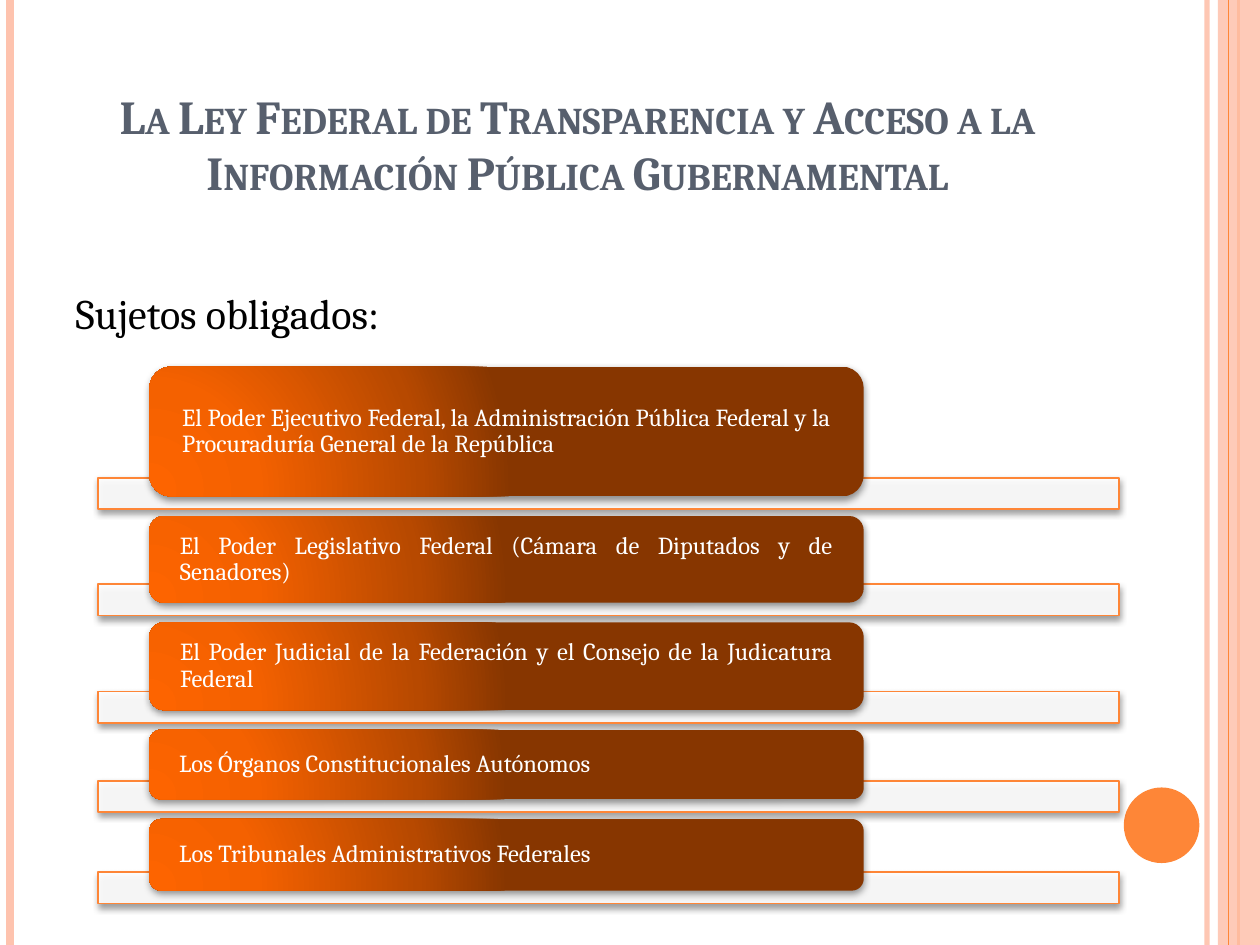
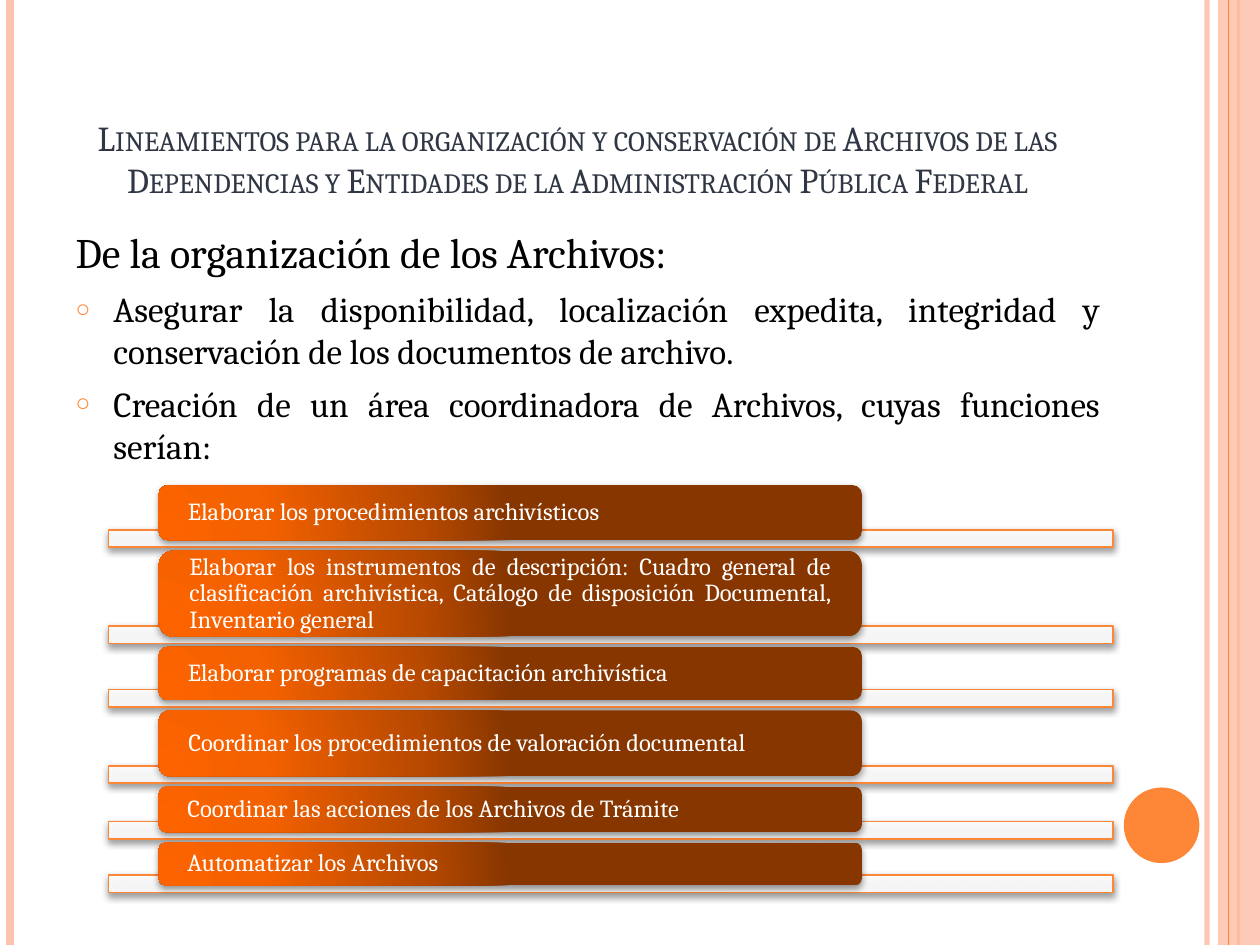
from dataclasses import dataclass

from lxml import etree
from pptx import Presentation
from pptx.dml.color import RGBColor
from pptx.enum.shapes import MSO_CONNECTOR, MSO_SHAPE
from pptx.enum.text import MSO_ANCHOR, MSO_AUTO_SIZE, PP_ALIGN
from pptx.oxml.ns import qn
from pptx.util import Pt

RECT, ROUND, OVAL = MSO_SHAPE.RECTANGLE, MSO_SHAPE.ROUNDED_RECTANGLE, MSO_SHAPE.OVAL
STRAIGHT = MSO_CONNECTOR.STRAIGHT
LEFT, CENTER, JUSTIFY = PP_ALIGN.LEFT, PP_ALIGN.CENTER, PP_ALIGN.JUSTIFY
TOP, MIDDLE, BOTTOM = MSO_ANCHOR.TOP, MSO_ANCHOR.MIDDLE, MSO_ANCHOR.BOTTOM
NO_AUTOFIT = MSO_AUTO_SIZE.NONE

WIDTH, HEIGHT = 720, 540
FONT = "Cambria"
ORANGE, PEACH, WHITE, BLACK = "FE8637", "FEC3AE", "FFFFFF", "000000"
PILL_STOPS = ((0, "FD6400"), (30, "F46100"), (75, "B74900"), (100, "873600"))
PILL_CENTER = {"l": 5, "t": 100, "r": 120, "b": 10}
INDENT = 21.6
TEXT_INSET = 15.1


@dataclass
class Stripe:
    x: float
    weight: float
    color: str
    alpha: int = 100


@dataclass
class Line:
    text: str
    size: float = 20
    bullet: bool = True


@dataclass
class Item:
    text: str
    height: float
    align: PP_ALIGN = LEFT


@dataclass
class ItemList:
    left: float
    top: float
    width: float
    bar_height: float
    overlap: float
    gap: float
    items: list[Item]


@dataclass
class Page:
    title: str
    title_size: float
    title_color: str
    title_bold: bool
    body_inset: float
    lines: list[Line]
    item_list: ItemList


STRIPES = [
    Stripe(689.8, 3, PEACH, 93),
    Stripe(5.8, 4.5, PEACH),
    Stripe(707.8, 1.5, ORANGE),
]
INNER_STRIPE = Stripe(702, 0.75, ORANGE)

PAGES = [
    Page(
        "La Ley Federal de Transparencia y Acceso a la Información Pública Gubernamental",
        27, "575F6D", True, 38.4,
        [Line("Sujetos obligados:", 24, False)],
        ItemList(56.2, 209.5, 583.2, 18, 10.6, 11.2, [
            Item("El Poder Ejecutivo Federal, la Administración Pública Federal y "
                 "la Procuraduría General de la República", 74.2, JUSTIFY),
            Item("El Poder Legislativo Federal (Cámara de Diputados y de Senadores)",
                 49.5, JUSTIFY),
            Item("El Poder Judicial de la Federación y el Consejo de la Judicatura Federal",
                 50.2, JUSTIFY),
            Item("Los Órganos Constitucionales Autónomos", 39.8),
            Item("Los Tribunales Administrativos Federales", 41),
        ]),
    ),
    Page(
        "Lineamientos para la organización y conservación de Archivos de las "
        "Dependencias y Entidades de la Administración Pública Federal",
        20, "303744", False, 3.6,
        [
            Line("De la organización de los Archivos:", 24, False),
            Line("Asegurar la disponibilidad, localización expedita, integridad y "
                 "conservación de los documentos de archivo."),
            Line("Creación de un área coordinadora de Archivos, cuyas funciones serían:"),
        ],
        ItemList(62, 277.2, 574, 10, 6, 6, [
            Item("Elaborar los procedimientos archivísticos", 31.5),
            Item("Elaborar los instrumentos de descripción: Cuadro general de "
                 "clasificación archivística, Catálogo de disposición Documental, "
                 "Inventario general", 49, JUSTIFY),
            Item("Elaborar programas de capacitación archivística", 30.3),
            Item("Coordinar los procedimientos de valoración documental", 37.6),
            Item("Coordinar las acciones de los Archivos de Trámite", 25.9),
            Item("Automatizar los Archivos", 24.5),
        ]),
    ),
]


def rgb(color: str) -> RGBColor:
    return RGBColor.from_string(color)


def add_xml(parent, tag: str, **attrs):
    return etree.SubElement(parent, qn(tag), {k: str(v) for k, v in attrs.items()})


def set_alpha(sp, alpha: int) -> None:
    if alpha < 100:
        color = next(sp.element.spPr.iter(qn("a:srgbClr")))
        add_xml(color, "a:alpha", val=alpha * 1000)


def add_shadow(sp) -> None:
    effects = sp.element.spPr.find(qn("a:effectLst"))
    shadow = add_xml(effects, "a:outerShdw", blurRad=Pt(4), dist=Pt(1.6),
                     dir=5400000, rotWithShape=0)
    color = add_xml(shadow, "a:srgbClr", val=BLACK)
    add_xml(color, "a:alpha", val=42000)


def fill_radial(sp) -> None:
    sp.fill.gradient()
    grad = sp.element.spPr.find(qn("a:gradFill"))
    grad.clear()
    grad.set("rotWithShape", "1")
    stops = add_xml(grad, "a:gsLst")
    for pos, color in PILL_STOPS:
        stop = add_xml(stops, "a:gs", pos=pos * 1000)
        add_xml(stop, "a:srgbClr", val=color)
    circle = add_xml(grad, "a:path", path="circle")
    add_xml(circle, "a:fillToRect", **{k: v * 1000 for k, v in PILL_CENTER.items()})


def add_box(s, kind: MSO_SHAPE, x: float, y: float, w: float, h: float,
            color: str, alpha: int = 100):
    sp = s.shapes.add_shape(kind, Pt(x), Pt(y), Pt(w), Pt(h))
    sp.fill.solid()
    sp.fill.fore_color.rgb = rgb(color)
    set_alpha(sp, alpha)
    sp.line.fill.background()
    sp.shadow.inherit = False
    return sp


def add_stripe(s, stripe: Stripe) -> None:
    x = Pt(stripe.x)
    sp = s.shapes.add_connector(STRAIGHT, x, 0, x, Pt(HEIGHT))
    sp.line.color.rgb = rgb(stripe.color)
    sp.line.width = Pt(stripe.weight)
    set_alpha(sp, stripe.alpha)
    add_xml(sp.element.spPr, "a:effectLst")


def add_run(p, text: str, size: float, color: str):
    r = p.add_run()
    r.text = text
    r.font.name = FONT
    r.font.size = Pt(size)
    r.font.color.rgb = rgb(color)
    return r


def place(sp, x: float, y: float, w: float, h: float, anchor: MSO_ANCHOR):
    sp.left, sp.top, sp.width, sp.height = Pt(x), Pt(y), Pt(w), Pt(h)
    tf = sp.text_frame
    tf.word_wrap = True
    tf.auto_size = NO_AUTOFIT
    tf.vertical_anchor = anchor
    return tf


def add_frame(s) -> None:
    for stripe in STRIPES:
        add_stripe(s, stripe)
    add_box(s, RECT, 696, 0, 24, HEIGHT, PEACH, 87)
    add_stripe(s, INNER_STRIPE)
    add_box(s, OVAL, 642.2, 450, 43.2, 43.2, ORANGE)


def write_title(s, page: Page) -> None:
    tf = place(s.shapes.title, 36, 21.6, 588, 96.5, BOTTOM)
    p = tf.paragraphs[0]
    p.alignment = CENTER
    r = add_run(p, page.title, page.title_size, page.title_color)
    r.font.bold = page.title_bold
    r.font._element.set("cap", "small")


def write_body(s, page: Page) -> None:
    tf = place(s.placeholders[1], 36, 126, 600, 384, TOP)
    tf.margin_top = Pt(page.body_inset)
    for i, line in enumerate(page.lines):
        p = tf.add_paragraph() if i else tf.paragraphs[0]
        p.alignment = JUSTIFY
        p.space_before = Pt(6)
        add_run(p, line.text, line.size, BLACK)
        props = p._p.get_or_add_pPr()
        props.set("marL", str(Pt(INDENT)))
        props.set("indent", str(-Pt(INDENT)))
        if line.bullet:
            add_xml(add_xml(props, "a:buClr"), "a:srgbClr", val=ORANGE)
            add_xml(props, "a:buSzPct", val=70000)
            add_xml(props, "a:buChar", char="○")
        else:
            add_xml(props, "a:buNone")


def add_pill(s, item: Item, x: float, y: float, w: float) -> None:
    sp = add_box(s, ROUND, x, y, w, item.height, ORANGE)
    fill_radial(sp)
    add_shadow(sp)
    tf = sp.text_frame
    tf.word_wrap = True
    tf.vertical_anchor = MIDDLE
    tf.margin_left = tf.margin_right = Pt(TEXT_INSET)
    tf.margin_top = tf.margin_bottom = 0
    p = tf.paragraphs[0]
    p.alignment = item.align
    p.line_spacing = 0.9
    add_run(p, item.text, 14, WHITE)


def add_item_list(s, spec: ItemList) -> None:
    y = spec.top
    for item in spec.items:
        bar_y = y + item.height - spec.overlap
        bar = add_box(s, RECT, spec.left, bar_y, spec.width, spec.bar_height, WHITE, 90)
        bar.line.color.rgb = rgb(ORANGE)
        bar.line.width = Pt(1)
        add_shadow(bar)
        add_pill(s, item, spec.left + spec.width * 0.05, y, spec.width * 0.7)
        y += item.height + spec.gap


def main() -> None:
    prs = Presentation()
    prs.slide_width, prs.slide_height = Pt(WIDTH), Pt(HEIGHT)
    for page in PAGES:
        s = prs.slides.add_slide(prs.slide_layouts[1])
        add_frame(s)
        write_title(s, page)
        write_body(s, page)
        add_item_list(s, page.item_list)
    prs.save("out.pptx")


if __name__ == "__main__":
    main()
